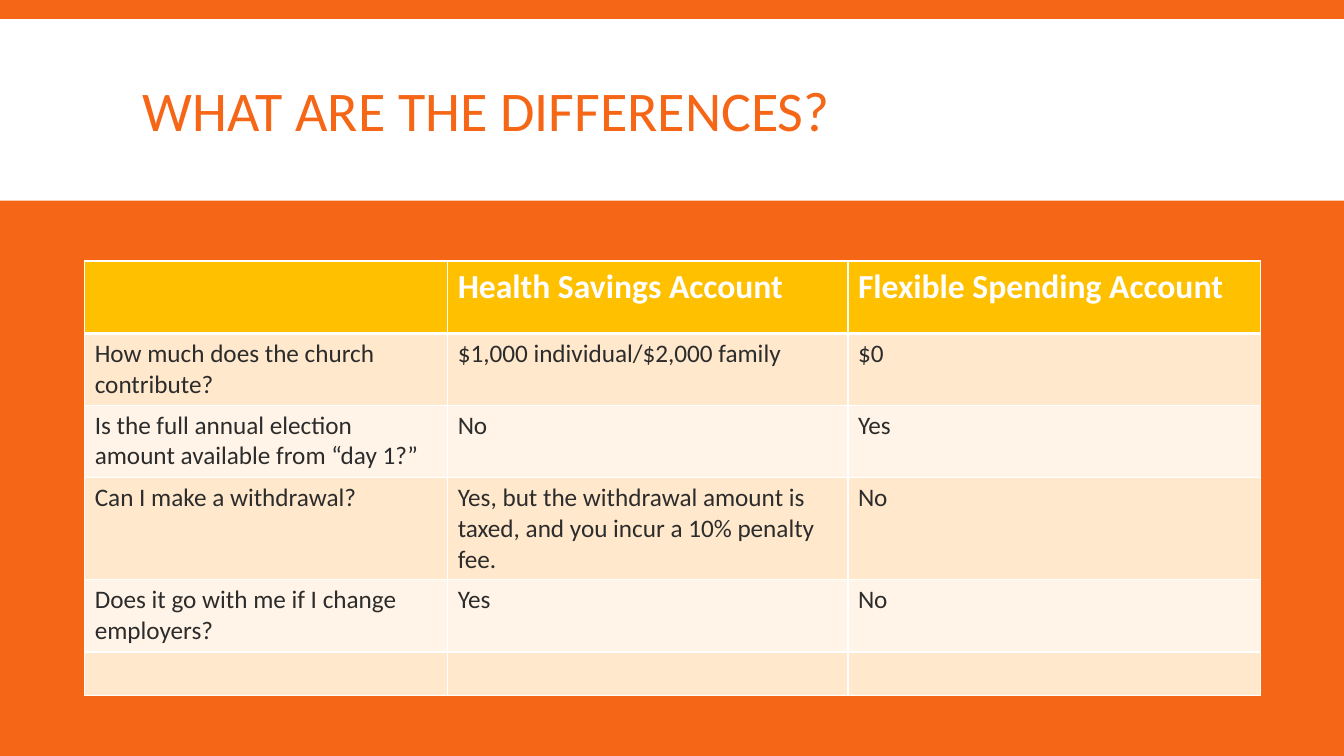
from dataclasses import dataclass

import pptx
from lxml import etree
from pptx.dml.color import RGBColor
from pptx.enum.shapes import MSO_SHAPE
from pptx.enum.text import MSO_ANCHOR
from pptx.oxml.ns import qn
from pptx.util import Inches, Pt


@dataclass(frozen=True)
class Theme:
    font: str = "Calibri"
    orange: str = "F56617"
    white: str = "FFFFFF"
    header: str = "FFC000"
    bands: tuple = ("FFE8CC", "FFF4E7")
    ink: str = "2C2C2C"
    title_size: int = 40
    header_size: int = 24
    body_size: int = 18
    thin: int = 1
    thick: int = 3


THEME = Theme()

COLUMN_WIDTHS = (3.6, 3.97, 4.09)
ROW_HEIGHTS = (0.72, 0.71, 0.72, 1.01, 0.72, 0.43)
ROWS = (
    ("", "Health Savings Account", "Flexible Spending Account"),
    ("How much does the church contribute?", "$1,000 individual/$2,000 family", "$0"),
    ("Is the full annual election amount available from “day 1?”", "No", "Yes"),
    (
        "Can I make a withdrawal?",
        "Yes, but the withdrawal amount is taxed, and you incur a 10% penalty fee.",
        "No",
    ),
    ("Does it go with me if I change employers?", "Yes", "No"),
    ("", "", ""),
)


def set_font(para, size, color, bold=False):
    para.font.name = THEME.font
    para.font.size = Pt(size)
    para.font.bold = bold
    para.font.color.rgb = RGBColor.from_string(color)


def set_fill(target, color):
    target.fill.solid()
    target.fill.fore_color.rgb = RGBColor.from_string(color)


def add_title_band(page, width):
    band = page.shapes.add_shape(
        MSO_SHAPE.RECTANGLE, 0, Inches(0.19), width, Inches(1.8)
    )
    band.shadow.inherit = False
    set_fill(band, THEME.white)
    band.line.fill.background()


def add_title(page, text):
    box = page.shapes.add_textbox(
        Inches(1.32), Inches(0.31), Inches(10.7), Inches(1.65)
    )
    frame = box.text_frame
    frame.word_wrap = True
    frame.vertical_anchor = MSO_ANCHOR.MIDDLE
    para = frame.paragraphs[0]
    para.text = text
    para.line_spacing = 0.85
    set_font(para, THEME.title_size, THEME.orange)


def set_borders(cell, top, bottom):
    """Draw white cell borders; must run before the cell's fill is set."""
    properties = cell._tc.get_or_add_tcPr()
    widths = {"L": THEME.thin, "R": THEME.thin, "T": top, "B": bottom}
    for side, width in widths.items():
        line = etree.SubElement(properties, qn(f"a:ln{side}"), w=str(Pt(width)))
        solid = etree.SubElement(line, qn("a:solidFill"))
        etree.SubElement(solid, qn("a:srgbClr"), val=THEME.white)


def format_cell(cell, text, row):
    is_header = row == 0
    set_borders(
        cell,
        top=THEME.thick if row == 1 else THEME.thin,
        bottom=THEME.thick if is_header else THEME.thin,
    )
    set_fill(cell, THEME.header if is_header else THEME.bands[(row - 1) % 2])
    para = cell.text_frame.paragraphs[0]
    if text:
        para.text = text
    if is_header:
        set_font(para, THEME.header_size, THEME.white, bold=True)
    else:
        set_font(para, THEME.body_size, THEME.ink)


def add_comparison_table(page):
    table = page.shapes.add_table(
        len(ROWS), len(COLUMN_WIDTHS), Inches(0.84), Inches(2.59),
        Inches(sum(COLUMN_WIDTHS)), Inches(sum(ROW_HEIGHTS)),
    ).table
    for column, width in zip(table.columns, COLUMN_WIDTHS):
        column.width = Inches(width)
    for row, height in zip(table.rows, ROW_HEIGHTS):
        row.height = Inches(height)
    for row, texts in enumerate(ROWS):
        for column, text in enumerate(texts):
            format_cell(table.cell(row, column), text, row)


def main():
    deck = pptx.Presentation()
    deck.slide_width = Inches(13.33)
    deck.slide_height = Inches(7.5)
    page = deck.slides.add_slide(deck.slide_layouts[6])
    set_fill(page.background, THEME.orange)
    add_title_band(page, deck.slide_width)
    add_title(page, "WHAT ARE THE DIFFERENCES?")
    add_comparison_table(page)
    deck.save("out.pptx")


if __name__ == "__main__":
    main()
